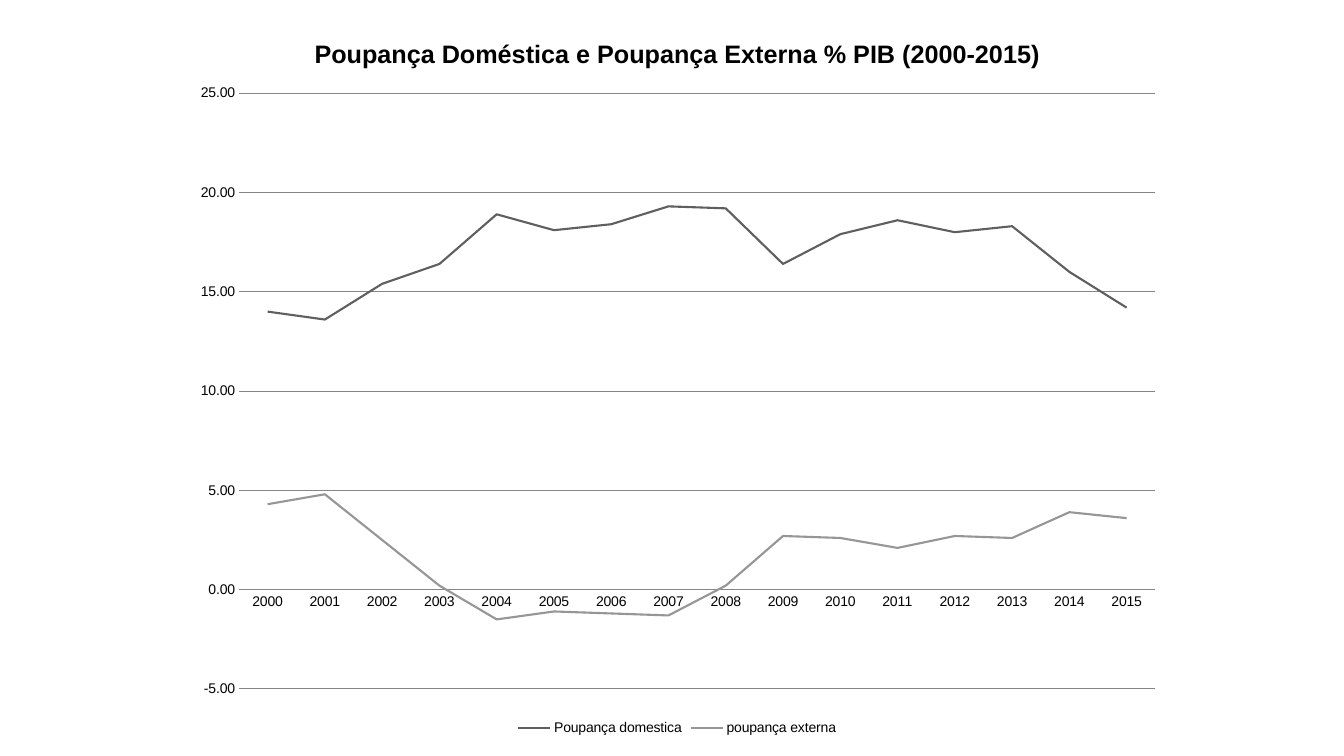
import pptx
import pptx.chart.data
import pptx.dml.color
import pptx.enum.chart
import pptx.oxml
import pptx.oxml.ns
import pptx.util

Pt = pptx.util.Pt
RGBColor = pptx.dml.color.RGBColor

BLACK = RGBColor(0x00, 0x00, 0x00)
GRID_GREY = RGBColor(0x86, 0x86, 0x86)
DOMESTIC_GREY = RGBColor(0x5F, 0x5F, 0x5F)
EXTERNAL_GREY = RGBColor(0x96, 0x96, 0x96)

TITLE = "Poupança Doméstica e Poupança Externa % PIB (2000-2015)"
YEARS = [str(year) for year in range(2000, 2016)]
SAVINGS = [
    ("Poupança domestica", DOMESTIC_GREY,
     [14, 13.6, 15.4, 16.4, 18.9, 18.1, 18.4, 19.3,
      19.2, 16.4, 17.9, 18.6, 18, 18.3, 16, 14.2]),
    ("poupança externa", EXTERNAL_GREY,
     [4.3, 4.8, 2.5, 0.2, -1.5, -1.1, -1.2, -1.3,
      0.2, 2.7, 2.6, 2.1, 2.7, 2.6, 3.9, 3.6]),
]


def style_font(font, size, bold=False):
    font.name = "Arial"
    font.size = Pt(size)
    font.bold = bold
    font.color.rgb = BLACK


def style_line(line, color, width):
    line.color.rgb = color
    line.width = Pt(width)


def place_plot(chart, x, y, w, h):
    """Fix the inner plot area, as fractions of the chart box."""
    plot_area = chart.plots[0]._element.getparent()
    for layout in plot_area.findall(pptx.oxml.ns.qn("c:layout")):
        plot_area.remove(layout)
    fractions = "".join(f'<c:{tag} val="{value}"/>' for tag, value in
                        (("x", x), ("y", y), ("w", w), ("h", h)))
    plot_area.insert(0, pptx.oxml.parse_xml(
        f'<c:layout {pptx.oxml.ns.nsdecls("c")}><c:manualLayout>'
        '<c:layoutTarget val="inner"/><c:xMode val="edge"/><c:yMode val="edge"/>'
        f'{fractions}</c:manualLayout></c:layout>'))


def add_savings_chart(slide, left, top, width, height):
    # Data
    savings_data = pptx.chart.data.CategoryChartData(number_format="0.00")
    savings_data.categories = YEARS
    for name, _, values in SAVINGS:
        savings_data.add_series(name, values)
    chart = slide.shapes.add_chart(
        pptx.enum.chart.XL_CHART_TYPE.LINE,
        left, top, width, height, savings_data).chart
    style_font(chart.font, 10)
    place_plot(chart, 0.06, 0.11, 0.92, 0.82)

    # Title
    chart.has_title = True
    title = chart.chart_title.text_frame.paragraphs[0]
    title.text = TITLE
    style_font(title.runs[0].font, 18, bold=True)
    chart.chart_title.include_in_layout = False

    # Legend
    chart.has_legend = True
    chart.legend.position = pptx.enum.chart.XL_LEGEND_POSITION.BOTTOM
    chart.legend.include_in_layout = False
    style_font(chart.legend.font, 10)

    # Axes
    years_axis, percent_axis = chart.category_axis, chart.value_axis
    for axis in (years_axis, percent_axis):
        axis.major_tick_mark = pptx.enum.chart.XL_TICK_MARK.NONE
        axis.minor_tick_mark = pptx.enum.chart.XL_TICK_MARK.NONE
        style_font(axis.tick_labels.font, 10)
    style_line(years_axis.format.line, GRID_GREY, 0.75)
    percent_axis.minimum_scale = -5
    percent_axis.maximum_scale = 25
    percent_axis.major_unit = 5
    percent_axis.tick_labels.number_format = "0.00"
    percent_axis.tick_labels.number_format_is_linked = False
    percent_axis.format.line.fill.background()
    percent_axis.has_major_gridlines = True
    style_line(percent_axis.major_gridlines.format.line, GRID_GREY, 0.75)

    # Series
    chart.plots[0].vary_by_categories = False
    for series, (_, color, _) in zip(chart.plots[0].series, SAVINGS):
        series.smooth = False
        series.marker.style = pptx.enum.chart.XL_MARKER_STYLE.NONE
        style_line(series.format.line, color, 1.5)


def main():
    deck = pptx.Presentation()
    deck.slide_width, deck.slide_height = Pt(960), Pt(540)
    slide = deck.slides.add_slide(deck.slide_layouts[6])
    add_savings_chart(slide, Pt(128), Pt(9.5), Pt(711.5), Pt(519))
    deck.save("out.pptx")


if __name__ == "__main__":
    main()
